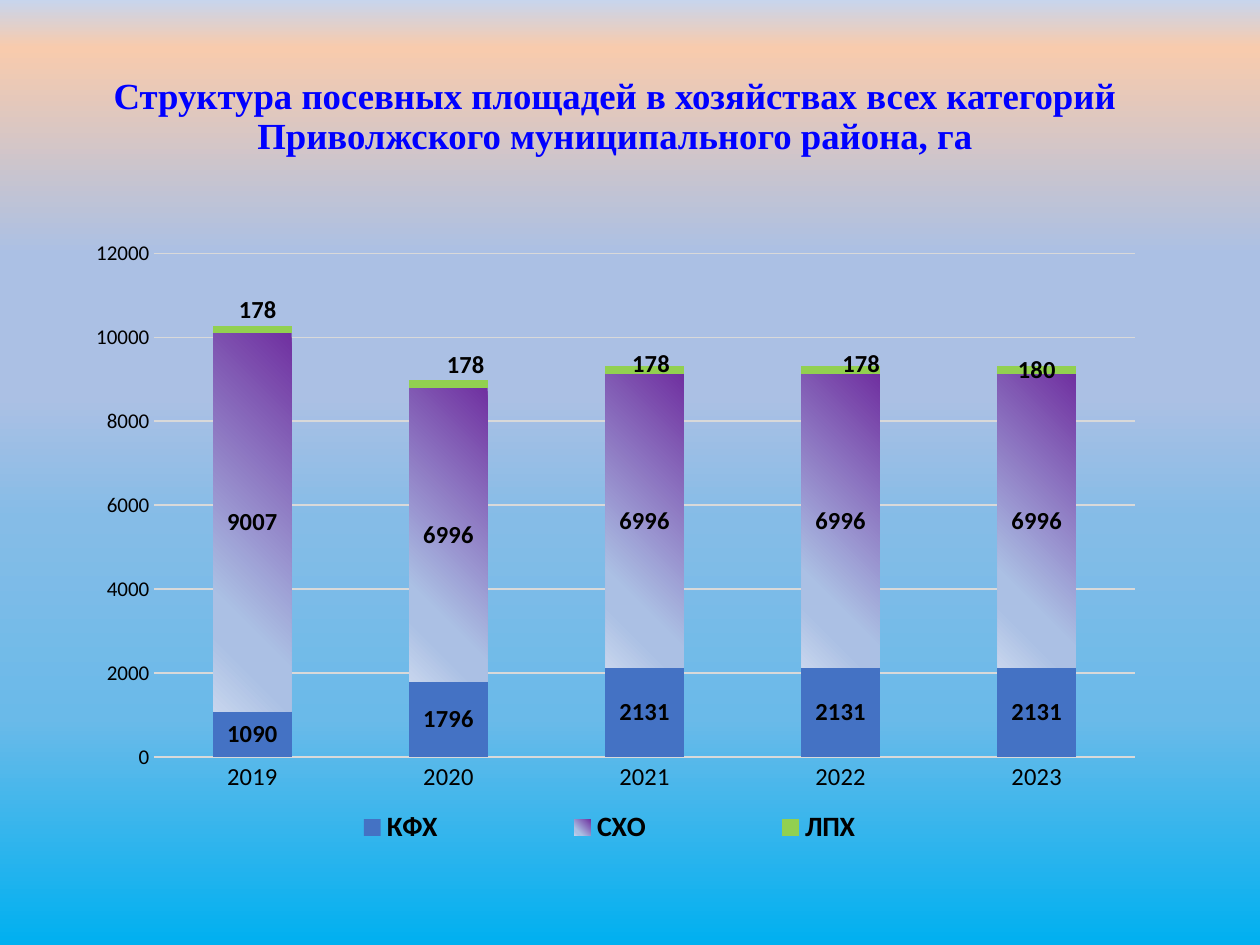
from typing import NamedTuple

from lxml.etree import SubElement
from pptx import Presentation
from pptx.chart.data import CategoryChartData
from pptx.dml.color import RGBColor
from pptx.enum.chart import XL_CHART_TYPE as ChartType
from pptx.enum.chart import XL_LEGEND_POSITION as LegendPosition
from pptx.enum.chart import XL_TICK_MARK as TickMark
from pptx.enum.text import MSO_ANCHOR as Anchor
from pptx.enum.text import PP_ALIGN as Align
from pptx.oxml.ns import qn
from pptx.util import Inches, Pt

BLACK = RGBColor(0x00, 0x00, 0x00)
TITLE_BLUE = RGBColor(0x00, 0x00, 0xFF)
GRID_GREY = RGBColor(0xD9, 0xD9, 0xD9)
FARM_BLUE = RGBColor(0x44, 0x72, 0xC4)
PLOT_GREEN = RGBColor(0x92, 0xD0, 0x50)
PURPLE = RGBColor(0x70, 0x30, 0xA0)
SKY = RGBColor(0x00, 0xB0, 0xF0)
LIGHT_SKY = RGBColor(0x6A, 0xBA, 0xE9)
PALE_SKY = RGBColor(0x85, 0xBC, 0xE7)
LAVENDER = RGBColor(0xAB, 0xC0, 0xE4)
PEACH = RGBColor(0xF8, 0xCB, 0xAD)
MIST = RGBColor(0xC7, 0xD5, 0xED)


class Gradient(NamedTuple):
    stops: list[tuple[int, RGBColor]]
    angle: int  # clockwise degrees


class Holding(NamedTuple):
    name: str
    areas: list[int]
    paint: RGBColor | Gradient


BACKDROP = Gradient([(0, SKY), (24, LIGHT_SKY), (45, PALE_SKY), (58, LAVENDER),
                     (73, LAVENDER), (95, PEACH), (100, MIST)], 270)
PURPLE_FADE = Gradient([(0, PURPLE), (74, LAVENDER), (83, LAVENDER), (100, MIST)], 135)

YEARS = ["2019", "2020", "2021", "2022", "2023"]
HOLDINGS = [
    Holding("КФХ", [1090, 1796, 2131, 2131, 2131], FARM_BLUE),
    Holding("СХО", [9007, 6996, 6996, 6996, 6996], PURPLE_FADE),
    Holding("ЛПХ", [178, 178, 178, 178, 180], PLOT_GREEN),
]
# Shifts of the top labels, as shares of the chart's size
TOP_LABEL_SHIFTS = [(0.005, -0.03), (0.016, -0.03), (0.006, -0.01), (0.019, -0.01)]


def apply_gradient(fill, owner, gradient: Gradient) -> None:
    fill.gradient()
    grad = owner.find(".//" + qn("a:gradFill"))
    for child in list(grad):
        grad.remove(child)
    stop_list = SubElement(grad, qn("a:gsLst"))
    for percent, color in gradient.stops:
        stop = SubElement(stop_list, qn("a:gs"), pos=str(percent * 1000))
        SubElement(stop, qn("a:srgbClr"), val=str(color))
    SubElement(grad, qn("a:lin"), ang=str(gradient.angle * 60000), scaled="0")


def style_font(font, size: int, color: RGBColor = BLACK, bold: bool = False,
               name: str = "Calibri") -> None:
    font.size, font.bold, font.name = Pt(size), bold, name
    font.color.rgb = color


def set_layout(parent, after: str, **settings: str | float) -> None:
    """Place a chart part by hand, its layout following the named child."""
    for old in parent.findall(qn("c:layout")):
        parent.remove(old)
    layout = parent.makeelement(qn("c:layout"))
    manual = SubElement(layout, qn("c:manualLayout"))
    for key, value in settings.items():
        SubElement(manual, qn("c:" + key), val=str(value))
    if after:
        parent.find(qn("c:" + after)).addnext(layout)
    else:
        parent.insert(0, layout)


def add_title(slide, box: tuple, wording: str) -> None:
    frame = slide.shapes.add_textbox(*box).text_frame
    frame.word_wrap = True
    frame.vertical_anchor = Anchor.BOTTOM
    frame.text = wording
    heading = frame.paragraphs[0]
    heading.alignment = Align.CENTER
    heading.line_spacing = 0.9
    style_font(heading.runs[0].font, 21, TITLE_BLUE, True, "Times New Roman")


def style_axes(chart) -> None:
    for axis, size in ((chart.category_axis, 14), (chart.value_axis, 12)):
        axis.major_tick_mark = axis.minor_tick_mark = TickMark.NONE
        axis.format.line.fill.background()
        style_font(axis.tick_labels.font, size)
    areas = chart.value_axis
    areas.minimum_scale, areas.maximum_scale, areas.major_unit = 0, 12000, 2000
    areas.has_major_gridlines = True
    grid = areas.major_gridlines.format.line
    grid.color.rgb, grid.width = GRID_GREY, Pt(0.75)


def style_series(series, paint: RGBColor | Gradient) -> None:
    fill = series.format.fill
    if isinstance(paint, Gradient):
        apply_gradient(fill, series._element, paint)
    else:
        fill.solid()
        fill.fore_color.rgb = paint
    labels = series.data_labels
    labels.show_value = True
    style_font(labels.font, 14, bold=True)


def add_area_chart(slide, box: tuple) -> None:
    areas = CategoryChartData()
    areas.categories = YEARS
    for holding in HOLDINGS:
        areas.add_series(holding.name, holding.areas)
    chart = slide.shapes.add_chart(ChartType.COLUMN_STACKED, *box, areas).chart
    chart.has_title = False
    style_font(chart.font, 10)
    style_axes(chart)

    # Columns and their labels
    plot = chart.plots[0]
    plot.gap_width, plot.overlap = 150, 100
    plot.vary_by_categories = False
    for series, holding in zip(plot.series, HOLDINGS):
        style_series(series, holding.paint)
    top = plot.series[-1]
    for index, (dx, dy) in enumerate(TOP_LABEL_SHIFTS):
        style_font(top.points[index].data_label.font, 14, bold=True)
    for label, (dx, dy) in zip(top._element.iter(qn("c:dLbl")), TOP_LABEL_SHIFTS):
        set_layout(label, "idx", x=dx, y=dy)

    # Legend and plot area
    chart.has_legend = True
    legend = chart.legend
    legend.position = LegendPosition.BOTTOM
    legend.include_in_layout = False
    style_font(legend.font, 16, bold=True)
    set_layout(legend._element, "legendPos", xMode="edge", yMode="edge",
               x=0.15, y=0.91, w=0.69, h=0.08)
    set_layout(chart._chartSpace.find(".//" + qn("c:plotArea")), "",
               layoutTarget="inner", xMode="edge", yMode="edge",
               x=0.074, y=0.04, w=0.907, h=0.798)


def main() -> None:
    deck = Presentation()
    deck.slide_width, deck.slide_height = Inches(10), Inches(7.5)
    slide = deck.slides.add_slide(deck.slide_layouts[6])
    apply_gradient(slide.background.fill, slide._element, BACKDROP)

    # Title and chart share one column
    left, width = Inches(0.59), Inches(8.58)
    add_title(slide, (left, Inches(0.36), width, Inches(0.94)),
              "Структура посевных площадей в хозяйствах всех категорий "
              "Приволжского муниципального района, га")
    add_area_chart(slide, (left, Inches(1.81), width, Inches(5.01)))
    deck.save("out.pptx")


if __name__ == "__main__":
    main()
